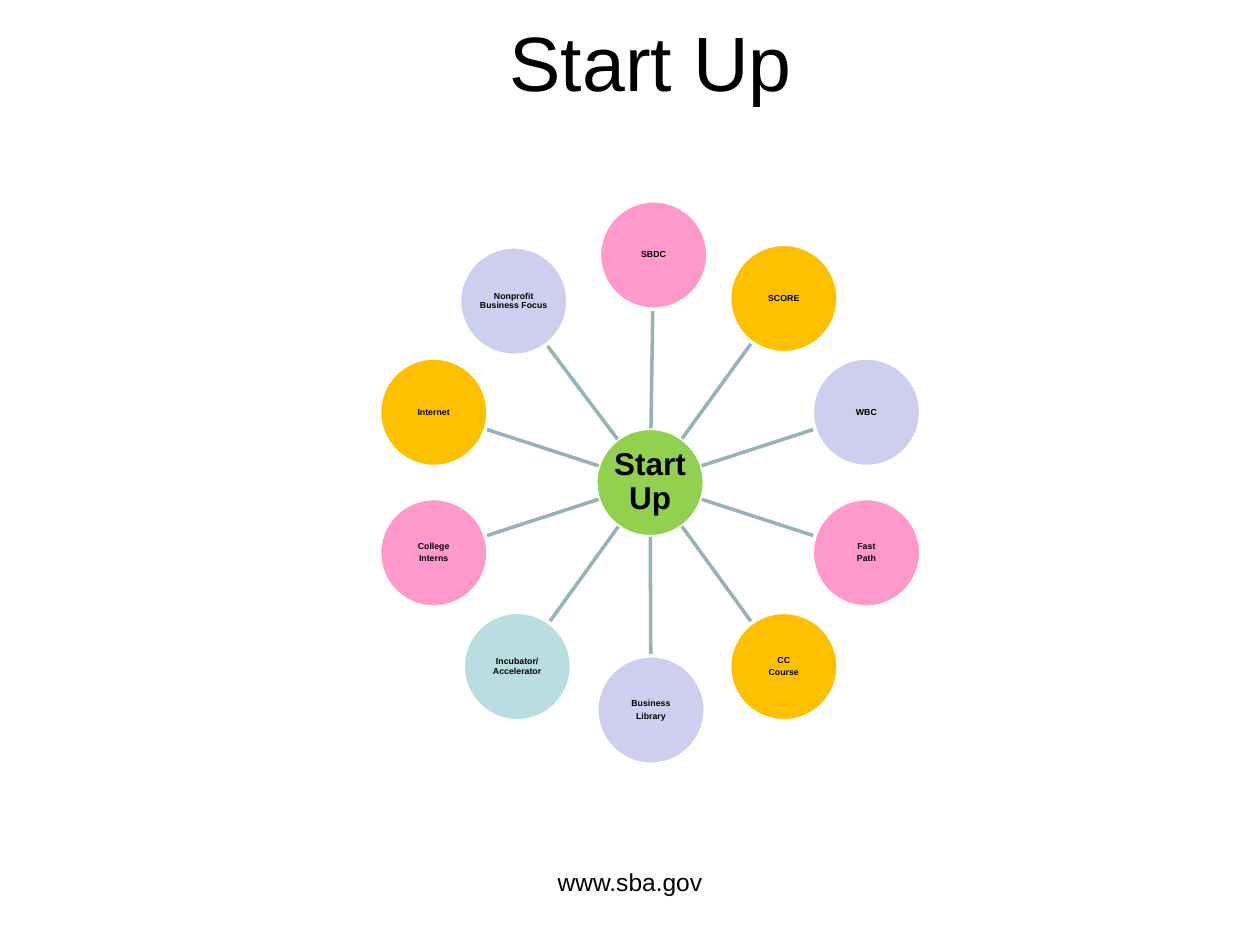
from math import cos, hypot, radians, sin

from lxml import etree
from pptx import Presentation
from pptx.dml.color import RGBColor
from pptx.enum.shapes import MSO_CONNECTOR, MSO_SHAPE
from pptx.enum.text import MSO_ANCHOR, PP_ALIGN
from pptx.oxml.ns import qn
from pptx.util import Pt

OVAL = MSO_SHAPE.OVAL
STRAIGHT = MSO_CONNECTOR.STRAIGHT
MIDDLE, TOP = MSO_ANCHOR.MIDDLE, MSO_ANCHOR.TOP
CENTER = PP_ALIGN.CENTER

COLORS = {
    "white": "FFFFFF", "text": "000000", "spoke": "96B3B6", "green": "92D050",
    "pink": "FF99CC", "gold": "FFC000", "lilac": "CECEEF", "teal": "BADDE1",
}
DIAMETER = 62
RING_RADIUS = 130

# Paragraphs, colour and shift from the even ring, clockwise from the top
RESOURCES = [
    (["SBDC"], "pink", (2, 0)),
    (["SCORE"], "gold", (0, 0)),
    (["WBC"], "lilac", (0, 0)),
    (["Fast", "Path"], "pink", (0, 0)),
    (["CC", "Course"], "gold", (0, 0)),
    (["Business", "Library"], "lilac", (0.5, 0)),
    (["Incubator/Accelerator"], "teal", (0.5, 0)),
    (["College", "Interns"], "pink", (0, 0)),
    (["Internet"], "gold", (0, 0)),
    (["Nonprofit Business Focus"], "lilac", (-1.5, 1.5)),
]


def color(name):
    return RGBColor.from_string(COLORS[name])


def write_text(frame, lines, size, anchor=MIDDLE, bold=False, spacing=None):
    frame.word_wrap = True
    frame.vertical_anchor = anchor
    for index, line in enumerate(lines):
        para = frame.paragraphs[0] if index == 0 else frame.add_paragraph()
        for name, value in {"alignment": CENTER, **(spacing or {})}.items():
            setattr(para, name, value)
        span = para.add_run()
        span.text = line
        span.font.color.rgb = color("text")
        for name, value in {"name": "Arial", "size": Pt(size), "bold": bold}.items():
            setattr(span.font, name, value)


def add_label(page, box, text, size, anchor):
    label = page.shapes.add_textbox(*map(Pt, box))
    write_text(label.text_frame, [text], size, anchor)


def add_circle(page, center, lines, fill, size, inset=0):
    left, top = (value - DIAMETER / 2 for value in center)
    circle = page.shapes.add_shape(OVAL, Pt(left), Pt(top), Pt(DIAMETER), Pt(DIAMETER))
    circle.shadow.inherit = False
    circle.fill.solid()
    circle.fill.fore_color.rgb = color(fill)
    circle.line.color.rgb = color("white")
    circle.line.width = Pt(2)
    frame = circle.text_frame
    for side in ("left", "top", "right", "bottom"):
        setattr(frame, f"margin_{side}", Pt(inset))
    spacing = {"line_spacing": 0.9, "space_after": Pt(0.35 * size)}
    write_text(frame, lines, size, bold=True, spacing=spacing)


def add_spoke(page, hub, center):
    """Join the facing edges of two circles."""
    across, down = center[0] - hub[0], center[1] - hub[1]
    share = DIAMETER / 2 / hypot(across, down)
    ends = [hub[0] + across * share, hub[1] + down * share,
            center[0] - across * share, center[1] - down * share]
    spoke = page.shapes.add_connector(STRAIGHT, *map(Pt, ends))
    spoke.line.color.rgb = color("spoke")
    spoke.line.width = Pt(2)
    etree.SubElement(spoke.element.spPr, qn("a:effectLst"))


def add_wheel(page, box):
    left, top, width, height = box
    hub = (left + width / 2, top + height / 2)
    add_circle(page, hub, ["Start Up"], "green", 18, inset=0.9)
    for index, (lines, fill, shift) in enumerate(RESOURCES):
        angle = radians(index * 360 / len(RESOURCES) - 90)
        center = (hub[0] + RING_RADIUS * cos(angle) + shift[0],
                  hub[1] + RING_RADIUS * sin(angle) + shift[1])
        add_spoke(page, hub, center)
        add_circle(page, center, lines, fill, 5)


def main():
    deck = Presentation()
    deck.slide_width, deck.slide_height = Pt(720), Pt(540)
    page = deck.slides.add_slide(deck.slide_layouts[6])
    add_label(page, (66, -1.5, 612, 72), "Start Up", 44, MIDDLE)
    add_wheel(page, (210.5, 114.75, 322, 322))
    add_label(page, (246, 492, 228, 36), "www.sba.gov", 14, TOP)
    deck.save("out.pptx")


if __name__ == "__main__":
    main()
